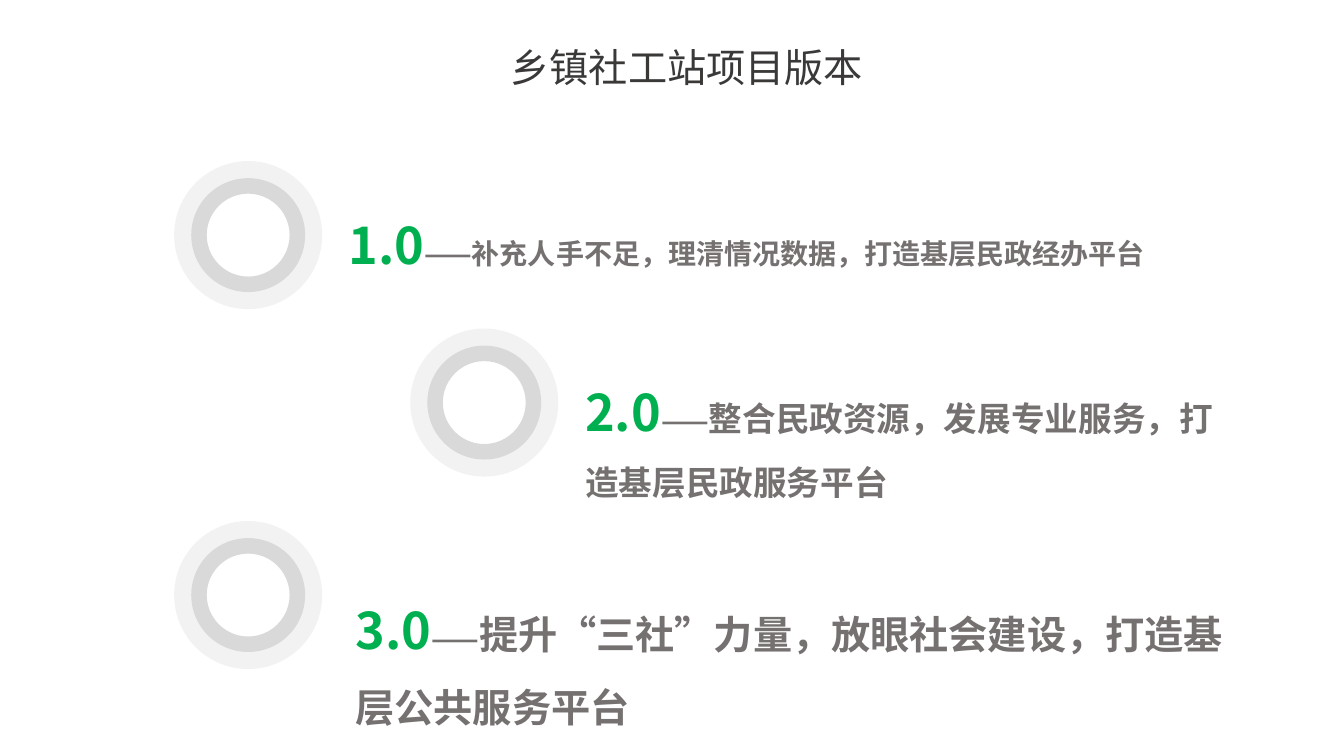
import pptx
import pptx.dml.color
import pptx.enum.shapes
import pptx.enum.text
import pptx.oxml.ns
import pptx.util
from lxml import etree
from pptx.util import Cm

FONT = "Noto Sans CJK SC"
COLORS = {
    "title": "3B3838",
    "version": "00B050",
    "text": "767171",
    "outer_ring": "F2F2F2",
    "inner_ring": "D9D9D9",
}
RING_SIZE = 3.73
RING_INSET = 0.43
RING_THICKNESS = 0.136

# ring (left, top), text box (left, top, width, height), version, text, text size
VERSIONS = [
    ((4.39, 4.06), (8.53, 4.5, 21.62, 2.57), "1.0",
     "补充人手不足，理清情况数据，打造基层民政经办平台", 20),
    ((10.34, 8.28), (14.5, 8.71, 16.69, 4.09), "2.0",
     "整合民政资源，发展专业服务，打造基层民政服务平台", 24),
    ((4.39, 13.13), (8.71, 14.22, 23.32, 4.37), "3.0",
     "提升“三社”力量，放眼社会建设，打造基层公共服务平台", 28),
]


def color(name):
    return pptx.dml.color.RGBColor.from_string(COLORS[name])


def add_paragraph_box(page, box, bold=False):
    """Add a wrapping text box and return its only paragraph."""
    frame = page.shapes.add_textbox(*map(Cm, box)).text_frame
    frame.word_wrap = True
    para = frame.paragraphs[0]
    para.line_spacing = 1.5
    para.font.bold = bold
    para.font.name = FONT
    return para


def add_span(para, text, size, color_name):
    span = para.add_run()
    span.text = text
    span.font.size = pptx.util.Pt(size)
    span.font.color.rgb = color(color_name)
    span.font.bold = para.font.bold
    span.font.name = FONT
    east_asian = etree.SubElement(span.font._element, pptx.oxml.ns.qn("a:ea"))
    east_asian.set("typeface", FONT)


def add_title(page, box, text):
    para = add_paragraph_box(page, box)
    para.alignment = pptx.enum.text.PP_ALIGN.CENTER
    add_span(para, text, 28, "title")


def add_rings(page, left, top):
    """Draw two concentric rings, the inner one inset evenly."""
    for inset, color_name in ((0, "outer_ring"), (RING_INSET, "inner_ring")):
        size = Cm(RING_SIZE - 2 * inset)
        ring = page.shapes.add_shape(
            pptx.enum.shapes.MSO_SHAPE.DONUT,
            Cm(left + inset), Cm(top + inset), size, size)
        ring.adjustments[0] = RING_THICKNESS
        ring.shadow.inherit = False
        ring.fill.solid()
        ring.fill.fore_color.rgb = color(color_name)
        ring.line.fill.background()


def add_version(page, ring_corner, box, version, text, size):
    add_rings(page, *ring_corner)
    para = add_paragraph_box(page, box, bold=True)
    add_span(para, version, 36, "version")
    add_span(para, "——", 20, "text")
    add_span(para, text, size, "text")


def main():
    deck = pptx.Presentation()
    deck.slide_width, deck.slide_height = Cm(33.87), Cm(19.05)
    page = deck.slides.add_slide(deck.slide_layouts[6])
    for version in VERSIONS:
        add_version(page, *version)
    add_title(page, (7.72, 0.38, 19.18, 2.06), "乡镇社工站项目版本")
    deck.save("out.pptx")


if __name__ == "__main__":
    main()
